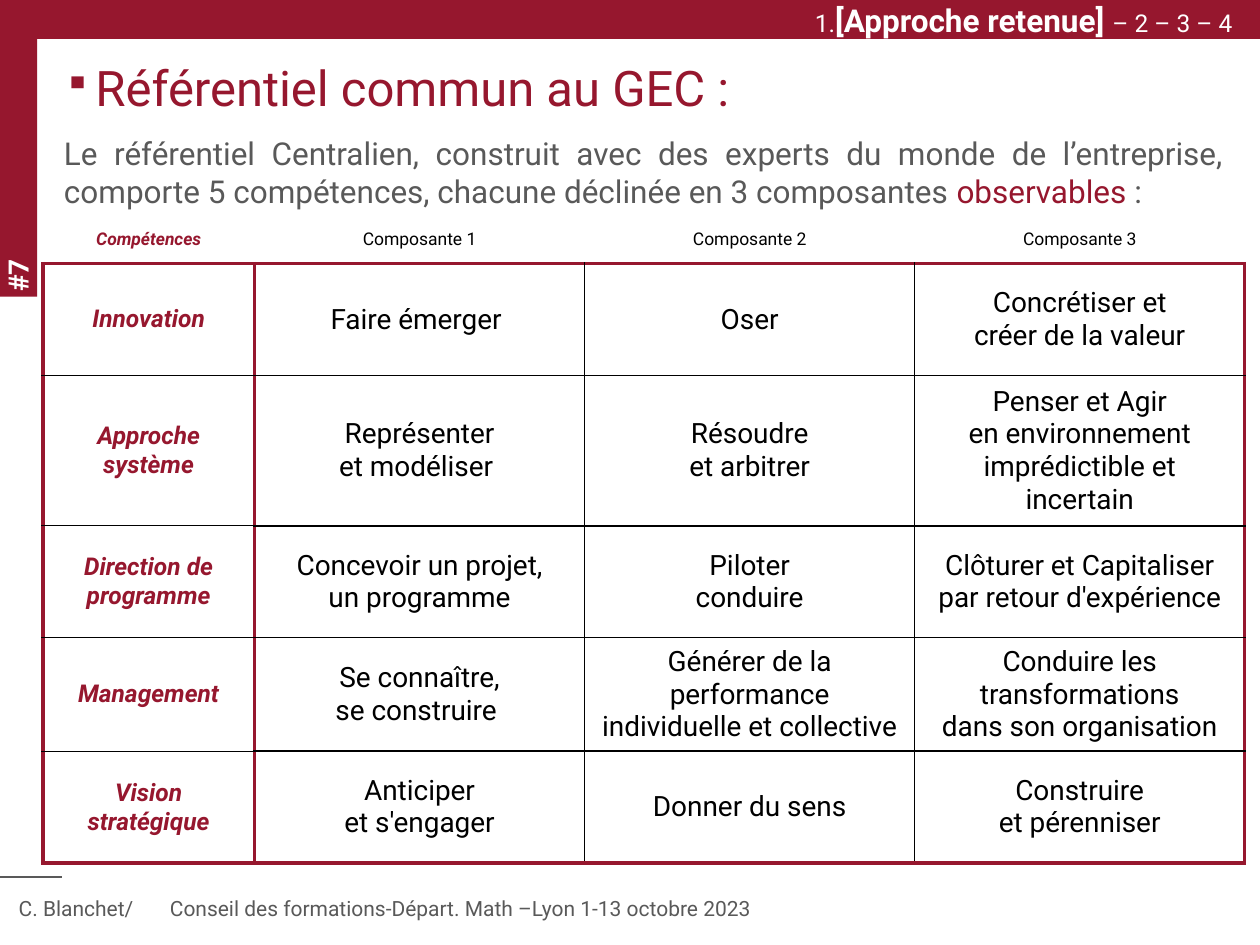
from typing import NamedTuple, Optional

from lxml import etree
from pptx import Presentation
from pptx.dml.color import RGBColor
from pptx.enum.shapes import MSO_CONNECTOR, MSO_SHAPE
from pptx.enum.text import MSO_ANCHOR, PP_ALIGN
from pptx.oxml.ns import qn
from pptx.util import Inches, Pt

RECT, STRAIGHT = MSO_SHAPE.RECTANGLE, MSO_CONNECTOR.STRAIGHT
LEFT, CENTER, RIGHT, JUSTIFY = PP_ALIGN.LEFT, PP_ALIGN.CENTER, PP_ALIGN.RIGHT, PP_ALIGN.JUSTIFY
MIDDLE = MSO_ANCHOR.MIDDLE
RED, GREY, BLACK, WHITE = "96172E", "595959", "000000", "FFFFFF"
FONT = "Roboto"


class Box(NamedTuple):
    """Place in percent of the slide's width and height."""
    left: float
    top: float
    width: float
    height: float
    rotation: int = 0


class Span(NamedTuple):
    text: str
    size: float
    color: str
    strong: bool = False
    italic: bool = False


class Edge(NamedTuple):
    color: str
    width: float


THICK, THIN, HAIR, GAP = Edge(RED, 2.21), Edge(BLACK, 0.96), Edge(BLACK, 0.75), Edge(WHITE, 1.47)

# Table grid, in percent of the slide
COLUMNS = [16.8] + [26.2] * 3
ROWS = [5.1, 11.85, 15.9] + [11.85] * 3
# "\n" starts a paragraph, "\v" a line within it
COMPETENCES = [
    ["Compétences", "Composante 1", "Composante 2", "Composante 3"],
    ["Innovation", "Faire émerger ", "Oser", "Concrétiser et\ncréer de la valeur"],
    ["Approche système", "Représenter\net modéliser ", "Résoudre\net arbitrer",
     "Penser et Agir\nen environnement imprédictible et incertain"],
    ["Direction de programme", "Concevoir un projet,\nun programme", "Piloter\nconduire",
     "Clôturer et Capitaliser\npar retour d'expérience"],
    ["Management", "Se connaître,\nse construire ",
     "Générer de la\nperformance\vindividuelle et collective",
     "Conduire les transformations\vdans son organisation"],
    ["Vision stratégique", "Anticiper\net s'engager", "Donner du sens",
     "Construire\net pérenniser"],
]

prs = Presentation()
prs.slide_width, prs.slide_height = Inches(10), Inches(7.5)
s = prs.slides.add_slide(prs.slide_layouts[6])


def rgb(color: str) -> RGBColor:
    return RGBColor.from_string(color)


def across(share: float) -> int:
    return round(prs.slide_width * share / 100)


def down(share: float) -> int:
    return round(prs.slide_height * share / 100)


def frame(box: Box) -> tuple:
    return across(box.left), down(box.top), across(box.width), down(box.height)


def add_spans(p, spans: list, align=LEFT) -> None:
    p.alignment = align
    for span in spans:
        for i, line in enumerate(span.text.split("\v")):
            if i:
                p.add_line_break()
            r = p.add_run()
            r.text = line
            style = {"name": FONT, "size": Pt(span.size), "bold": span.strong,
                     "italic": span.italic}
            for name, value in style.items():
                setattr(r.font, name, value)
            r.font.color.rgb = rgb(span.color)


def add_bar(box: Box) -> None:
    shape = s.shapes.add_shape(RECT, *frame(box))
    shape.shadow.inherit = False
    shape.fill.solid()
    shape.fill.fore_color.rgb = rgb(RED)
    shape.line.fill.background()
    shape.rotation = box.rotation


def add_text(box: Box, spans: list, align=LEFT, wrap: bool = True):
    sp = s.shapes.add_textbox(*frame(box))
    sp.rotation = box.rotation
    tf = sp.text_frame
    tf.word_wrap = wrap
    add_spans(tf.paragraphs[0], spans, align)
    return tf


def add_rule(left: float, right: float, top: float) -> None:
    line = s.shapes.add_connector(STRAIGHT, across(left), down(top), across(right), down(top))
    line.line.color.rgb = rgb(GREY)
    line.line.width = Pt(0.75)
    etree.SubElement(line._element.spPr, qn("a:effectLst"))


def add_bullet(p, char: str, color: str, indent: float, percent: int) -> None:
    props = p._p.get_or_add_pPr()
    props.set("marL", str(Inches(indent)))
    props.set("indent", str(-Inches(indent)))
    tint = etree.SubElement(props, qn("a:buClr"))
    etree.SubElement(tint, qn("a:srgbClr"), val=color)
    etree.SubElement(props, qn("a:buSzPct"), val=str(percent * 1000))
    etree.SubElement(props, qn("a:buChar"), char=char)


def add_tab(p, inches: float) -> None:
    tabs = etree.SubElement(p._p.get_or_add_pPr(), qn("a:tabLst"))
    etree.SubElement(tabs, qn("a:tab"), pos=str(Inches(inches)), algn="l")


def vertical_edge(row: int, i: int) -> Optional[Edge]:
    outer = i in (0, len(COLUMNS))
    if row == 0:
        return None if outer else GAP
    return THICK if outer or i == 1 else THIN


def horizontal_edge(col: int, i: int) -> Optional[Edge]:
    if i == 0:
        return None
    if i in (1, len(ROWS)):
        return THICK
    return THIN if col else HAIR


def set_borders(cell, edges: dict) -> None:
    props = cell._tc.get_or_add_tcPr()
    for side, edge in edges.items():
        line = etree.SubElement(props, qn(f"a:ln{side}"), w=str(Pt(edge.width if edge else 0)))
        if edge:
            paint = etree.SubElement(line, qn("a:solidFill"))
            etree.SubElement(paint, qn("a:srgbClr"), val=edge.color)
        else:
            etree.SubElement(line, qn("a:noFill"))


def fill_cell(cell, row: int, col: int, text: str) -> None:
    set_borders(cell, {"L": vertical_edge(row, col), "R": vertical_edge(row, col + 1),
                       "T": horizontal_edge(col, row), "B": horizontal_edge(col, row + 1)})
    cell.fill.solid()
    cell.fill.fore_color.rgb = rgb(WHITE)
    cell.vertical_anchor = MIDDLE
    label = col == 0
    size = 10 if row == 0 else 14 if label else 16
    tf = cell.text_frame
    for i, part in enumerate(text.split("\n")):
        p = tf.add_paragraph() if i else tf.paragraphs[0]
        add_spans(p, [Span(part, size, RED if label else BLACK, label, label)], CENTER)


def add_competence_table(left: float, top: float) -> None:
    box = Box(left, top, sum(COLUMNS), sum(ROWS))
    table = s.shapes.add_table(len(ROWS), len(COLUMNS), *frame(box)).table
    table.first_row = table.horz_banding = False
    for column, share in zip(table.columns, COLUMNS):
        column.width = across(share)
    for row, share in zip(table.rows, ROWS):
        row.height = down(share)
    for r, texts in enumerate(COMPETENCES):
        for c, text in enumerate(texts):
            fill_cell(table.cell(r, c), r, c, text)


# Red bars, page number and footer
add_bar(Box(0, 0, 100, 4.13))
add_bar(Box(-10.4, 13.6, 23.6, 4.13, 270))
add_text(Box(-8.2, 17.07, 19.1, 4.8, 270), [Span("#7", 16, WHITE, True)])
add_rule(0, 4.9, 92.8)
footer = add_text(Box(0.5, 94.13, 84.2, 4), [
    Span("C. Blanchet/\tConseil des formations-Départ. Math –Lyon 1-13 octobre 2023", 12, GREY)])
add_tab(footer.paragraphs[0], 1.2)

# Title and introduction
body = add_text(Box(4.1, 4.2, 94, 77.8), [Span("Référentiel commun au GEC :", 28, RED)])
title = body.paragraphs[0]
add_bullet(title, "▪", RED, 0.25, 75)
title.line_spacing = 1.2
intro = body.add_paragraph()
intro.space_before = Pt(10)
add_spans(intro, [
    Span("Le référentiel Centralien, construit avec des experts du monde de l’entreprise, "
         "comporte 5 compétences, chacune déclinée en 3 composantes ", 18, GREY),
    Span("observables", 18, RED), Span(" :", 18, GREY)], JUSTIFY)

# Competence table
add_competence_table(3.4, 22.8)

# Progress through the talk
add_text(Box(60.2, -0.53, 39.1, 5.33), [
    Span("1.", 14, WHITE), Span("[Approche retenue] ", 18, WHITE, True),
    Span("– 2 – 3 – 4 ", 14, WHITE)], RIGHT, wrap=False)

prs.save("out.pptx")
